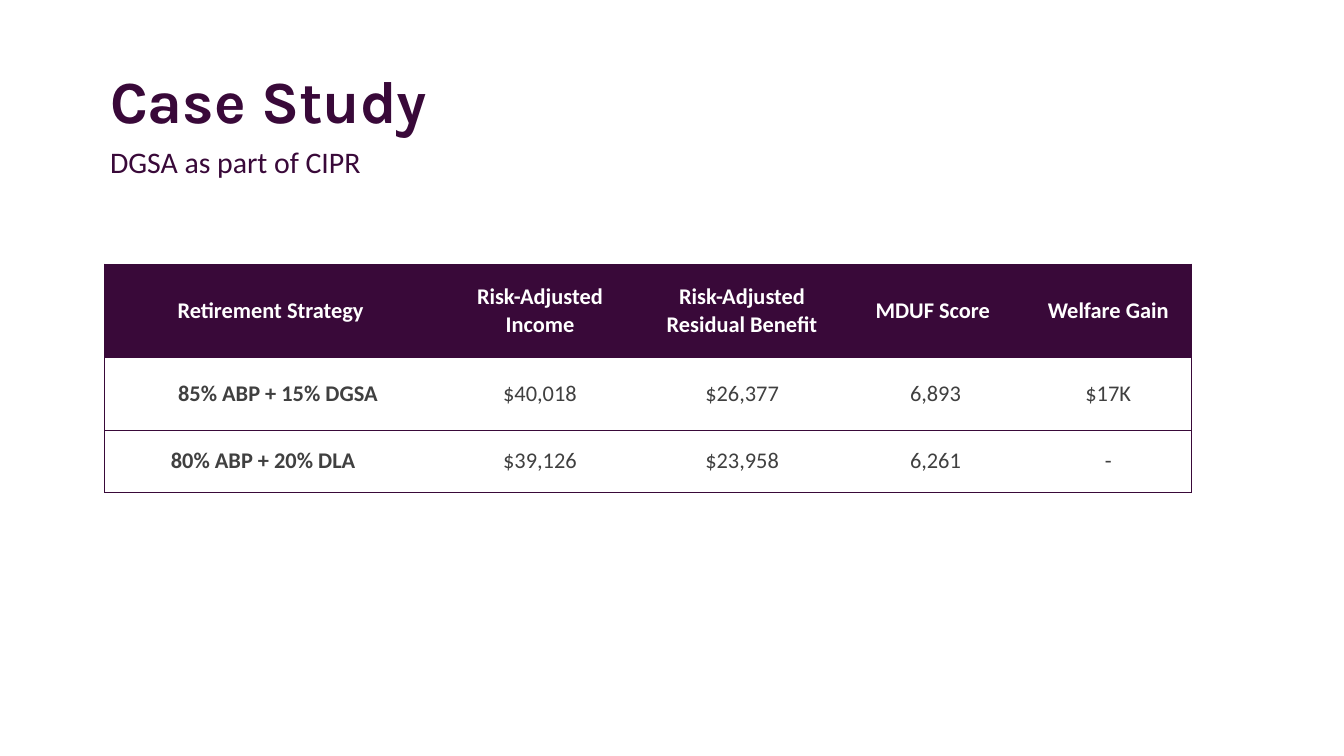
from dataclasses import dataclass

from lxml import etree
from pptx import Presentation
from pptx import util as u
from pptx.dml.color import RGBColor
from pptx.enum import text
from pptx.oxml import ns


@dataclass(frozen=True)
class Theme:
    """Colours, fonts and type sizes of the slide."""
    plum: str = "390939"
    grey: str = "404040"
    white: str = "FFFFFF"
    head: str = "Karla"
    body: str = "Calibri"
    big: int = 32
    mid: int = 16
    small: int = 12


THEME = Theme()
LEFT = 1.98
COLS = [6.27, 3.91, 3.73, 3.48, 3.15]
ROWS = [1.77, 1.38, 1.16]
DATA = [
    ["Retirement Strategy", "Risk-Adjusted Income", "Risk-Adjusted Residual Benefit",
     "MDUF Score", "Welfare Gain"],
    ["85% ABP + 15% DGSA", "$40,018", "$26,377", "6,893", "$17K"],
    ["80% ABP + 20% DLA", "$39,126", "$23,958", "6,261", "-"],
]
SHIFT = {(1, 0): (0.28, 0), (2, 0): (0, 0.28), (1, 3): (0.1, 0), (2, 3): (0.1, 0)}


def apply(obj, form):
    """Set each attribute named in a dict of format values."""
    for key, val in form.items():
        setattr(obj, key, val)


def inset(obj, left, top, right, low):
    """Set the inner margins in centimetres."""
    sides = zip(("left", "top", "right", "bottom"), (left, top, right, low))
    apply(obj, {f"margin_{side}": u.Cm(gap) for side, gap in sides})


def style(par, name, size, tint, bold=False):
    """Format the font of a paragraph."""
    apply(par.font, {"name": name, "size": u.Pt(size), "bold": bold})
    par.font.color.rgb = RGBColor.from_string(tint)


def fill_holder(shape, words, top, high, gaps, anchor, look, lead):
    """Place a placeholder and write one plain line in it."""
    apply(shape, {"left": u.Cm(LEFT), "top": u.Cm(top),
                  "width": u.Cm(22.12), "height": u.Cm(high)})
    frame = shape.text_frame
    apply(frame, {"text": words, "word_wrap": True, "vertical_anchor": anchor,
                  "auto_size": text.MSO_AUTO_SIZE.NONE})
    inset(frame, *gaps)
    par = frame.paragraphs[0]
    props = par._p.get_or_add_pPr()
    apply_xml = {"marL": "0", "indent": "0"}
    for key, val in apply_xml.items():
        props.set(key, val)
    etree.SubElement(props, ns.qn("a:buNone"))
    apply(par, {"alignment": text.PP_ALIGN.LEFT, "line_spacing": lead,
                "space_before": u.Pt(0)})
    style(par, *look)


def edge(cell, shown):
    """Draw the shown sides of a cell and clear the others."""
    props = cell._tc.get_or_add_tcPr()
    for side in "LRTB":
        line = etree.SubElement(props, ns.qn(f"a:ln{side}"), w=str(u.Pt(0.5)))
        if side in shown:
            paint = etree.SubElement(line, ns.qn("a:solidFill"))
            etree.SubElement(paint, ns.qn("a:srgbClr"), val=THEME.plum)
        else:
            etree.SubElement(line, ns.qn("a:noFill"))


def fill_cell(cell, words, row, col):
    """Write and format one table cell."""
    top = row == 0
    edge(cell, "TB" + "L" * (col == 0) + "R" * (col == len(COLS) - 1))
    if top:
        cell.fill.solid()
        cell.fill.fore_color.rgb = RGBColor.from_string(THEME.plum)
    else:
        cell.fill.background()
    left, right = SHIFT.get((row, col), (0, 0))
    inset(cell, 0.18 + left, 0, 0.18 + right, 0)
    apply(cell, {"text": words, "vertical_anchor": text.MSO_ANCHOR.MIDDLE})
    par = cell.text_frame.paragraphs[0]
    par.alignment = text.PP_ALIGN.CENTER
    style(par, THEME.body, THEME.small, THEME.white if top else THEME.grey,
          top or col == 0)


def add_grid(slide):
    """Add the table of strategies."""
    grid = slide.shapes.add_table(
        len(ROWS), len(COLS), u.Cm(LEFT), u.Cm(4.99),
        u.Cm(sum(COLS)), u.Cm(sum(ROWS))).table
    apply(grid, {"first_row": False, "horz_banding": False})
    for col, wide in zip(grid.columns, COLS):
        col.width = u.Cm(wide)
    for row, high in zip(grid.rows, ROWS):
        row.height = u.Cm(high)
    for row, line in enumerate(DATA):
        for col, words in enumerate(line):
            fill_cell(grid.cell(row, col), words, row, col)


def main():
    """Build the slide and save it."""
    deck = Presentation()
    apply(deck, {"slide_width": u.Cm(25.4), "slide_height": u.Cm(14.29)})
    slide = deck.slides.add_slide(deck.slide_layouts[1])
    fill_holder(slide.shapes.title, "Case Study", 0.51, 2.16,
                (0.1, 0.13, 0.25, 0.13), text.MSO_ANCHOR.BOTTOM,
                (THEME.head, THEME.big, THEME.plum, True), 0.75)
    fill_holder(slide.placeholders[1], "DGSA as part of CIPR", 2.72, 1.5,
                (0.1, 0, 0.1, 0.1), text.MSO_ANCHOR.TOP,
                (THEME.body, THEME.mid, THEME.plum), 1.0)
    add_grid(slide)
    deck.save("out.pptx")


if __name__ == "__main__":
    main()
